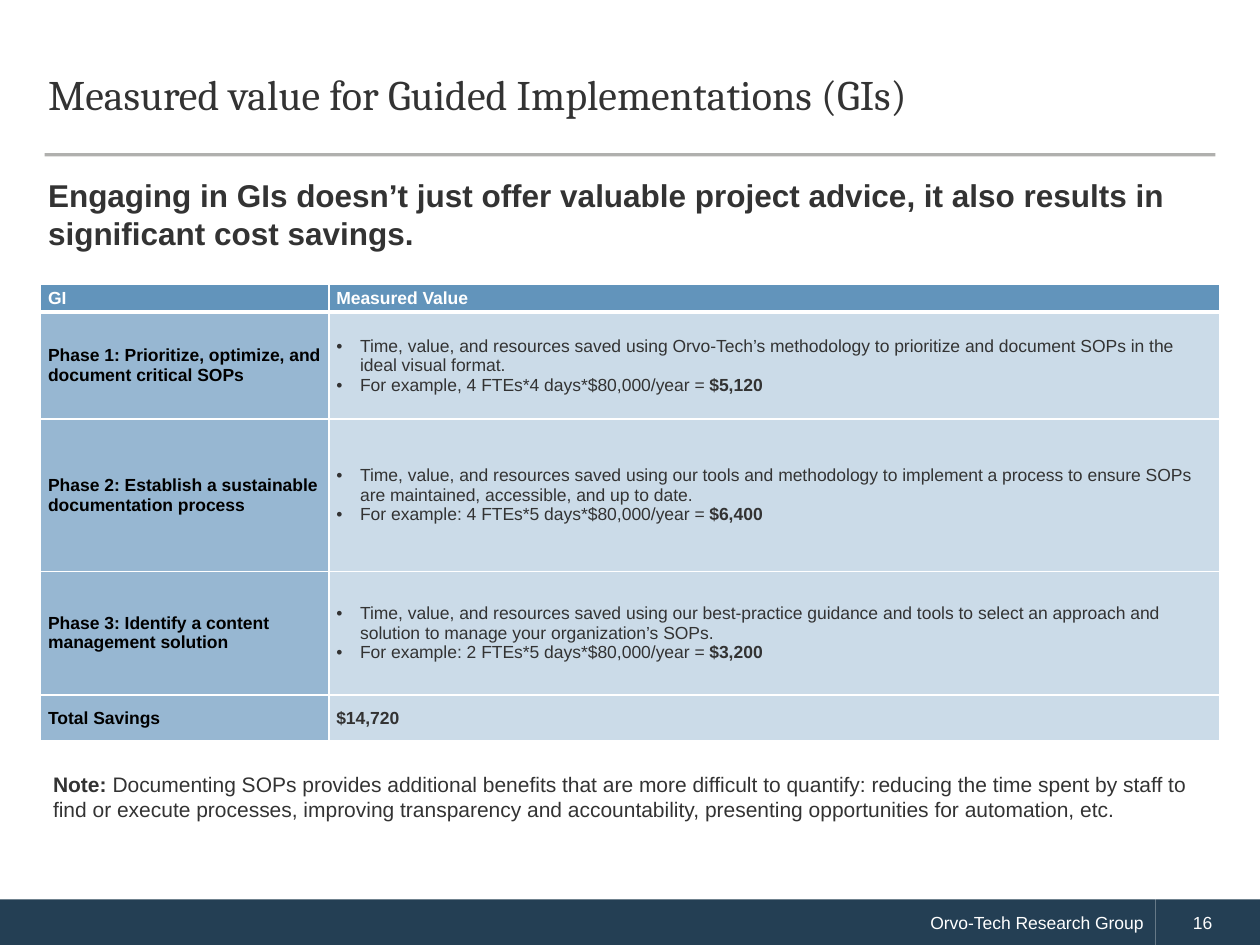
from lxml.etree import SubElement
from pptx import Presentation
from pptx.dml.color import RGBColor
from pptx.enum.shapes import MSO_CONNECTOR, MSO_SHAPE
from pptx.enum.text import MSO_ANCHOR as Anchor, PP_ALIGN as Align
from pptx.oxml.ns import qn
from pptx.util import Cm, Pt

WHITE = RGBColor(0xFF, 0xFF, 0xFF)
BLACK = RGBColor(0x00, 0x00, 0x00)
INK = RGBColor(0x33, 0x33, 0x33)
NAVY = RGBColor(0x24, 0x3F, 0x54)
RULE = RGBColor(0x45, 0x43, 0x3E)
HEADER_BLUE = RGBColor(0x62, 0x94, 0xBB)
LABEL_BLUE = RGBColor(0x97, 0xB7, 0xD2)
VALUE_BLUE = RGBColor(0xCB, 0xDB, 0xE8)

COMPANY = "Orvo-Tech"
COLUMN_WIDTHS = (5.81, 17.96)
ROW_HEIGHTS = (0.56, 2.16, 3.07, 2.49, 0.93)
PHASES = (
    ("Phase 1: Prioritize, optimize, and document critical SOPs",
     f"Time, value, and resources saved using {COMPANY}’s methodology to "
     "prioritize and document SOPs in the ideal visual format.",
     "For example, 4 FTEs*4 days*$80,000/year = ", "$5,120"),
    ("Phase 2: Establish a sustainable documentation process",
     "Time, value, and resources saved using our tools and methodology to "
     "implement a process to ensure SOPs are maintained, accessible, and up to date.",
     "For example: 4 FTEs*5 days*$80,000/year = ", "$6,400"),
    ("Phase 3: Identify a content management solution",
     "Time, value, and resources saved using our best-practice guidance and tools "
     "to select an approach and solution to manage your organization’s SOPs.",
     "For example: 2 FTEs*5 days*$80,000/year = ", "$3,200"),
)


def add_span(para, text, size, color=INK, bold=False, font="Arial"):
    span = para.add_run()
    span.text = text
    span.font.size = Pt(size)
    span.font.name = font
    span.font.bold = bold
    span.font.color.rgb = color


def set_indent(para, left, first=0):
    properties = para._p.get_or_add_pPr()
    properties.set("marL", str(Cm(left)))
    properties.set("indent", str(Cm(first)))
    return properties


def add_text_box(page, left, top, width, height, anchor=Anchor.TOP):
    box = page.shapes.add_textbox(Cm(left), Cm(top), Cm(width), Cm(height))
    box.text_frame.word_wrap = True
    box.text_frame.vertical_anchor = anchor
    return box.text_frame.paragraphs[0]


def add_footer_bar(page, left, width, text, indent, align):
    bar = page.shapes.add_shape(
        MSO_SHAPE.RECTANGLE, Cm(left), Cm(18.13), Cm(width), Cm(0.92))
    bar.shadow.inherit = False
    bar.fill.solid()
    bar.fill.fore_color.rgb = NAVY
    bar.line.fill.background()
    bar.text_frame.vertical_anchor = Anchor.MIDDLE
    para = bar.text_frame.paragraphs[0]
    para.alignment = align
    set_indent(para, indent)
    add_span(para, text, 10, WHITE)


def add_rule(page, left, right, top):
    rule = page.shapes.add_connector(
        MSO_CONNECTOR.STRAIGHT, Cm(left), Cm(top), Cm(right), Cm(top))
    rule.line.width = Pt(1.75)
    rule.line.color.rgb = RULE
    properties = rule._element.spPr
    color = properties.find(".//" + qn("a:srgbClr"))
    SubElement(color, qn("a:alpha"), val="42000")
    SubElement(properties, qn("a:effectLst"))


def add_borders(cell, top, bottom):
    properties = cell._tc.get_or_add_tcPr()
    for side, points in (("L", 1), ("R", 1), ("T", top), ("B", bottom)):
        line = SubElement(properties, qn(f"a:ln{side}"), w=str(Pt(points)))
        fill = SubElement(line, qn("a:solidFill"))
        SubElement(fill, qn("a:srgbClr"), val=str(WHITE))


def style_cell(cell, row, fill):
    add_borders(cell, 3 if row == 1 else 1, 3 if row == 0 else 1)
    cell.fill.solid()
    cell.fill.fore_color.rgb = fill
    cell.vertical_anchor = Anchor.MIDDLE
    cell.margin_left = cell.margin_right = Cm(0.15)
    cell.margin_top = cell.margin_bottom = 0
    return cell.text_frame


def add_bullet(para):
    properties = set_indent(para, 0.48, -0.48)
    SubElement(properties, qn("a:buFont"), typeface="Arial")
    SubElement(properties, qn("a:buChar"), char="•")


def add_bold_row(table, row, texts, fills, colors):
    for column, (text, fill, color) in enumerate(zip(texts, fills, colors)):
        frame = style_cell(table.cell(row, column), row, fill)
        add_span(frame.paragraphs[0], text, 10, color, True)


def add_phase_row(table, row, phase, benefit, example, saving):
    label = style_cell(table.cell(row, 0), row, LABEL_BLUE)
    add_span(label.paragraphs[0], phase, 10, BLACK, True)
    value = style_cell(table.cell(row, 1), row, VALUE_BLUE)
    first, second = value.paragraphs[0], value.add_paragraph()
    for para, text in ((first, benefit), (second, example)):
        add_bullet(para)
        add_span(para, text, 10)
    add_span(second, saving, 10, bold=True)


def add_savings_table(page):
    table = page.shapes.add_table(
        len(ROW_HEIGHTS), len(COLUMN_WIDTHS), Cm(0.82), Cm(5.73),
        Cm(sum(COLUMN_WIDTHS)), Cm(sum(ROW_HEIGHTS))).table
    for column, width in zip(table.columns, COLUMN_WIDTHS):
        column.width = Cm(width)
    for row, height in zip(table.rows, ROW_HEIGHTS):
        row.height = Cm(height)
    add_bold_row(table, 0, ("GI", "Measured Value"),
                 (HEADER_BLUE, HEADER_BLUE), (WHITE, WHITE))
    for row, phase in enumerate(PHASES, start=1):
        add_phase_row(table, row, *phase)
    add_bold_row(table, len(PHASES) + 1, ("Total Savings", "$14,720"),
                 (LABEL_BLUE, VALUE_BLUE), (BLACK, INK))


def main():
    deck = Presentation()
    deck.slide_width, deck.slide_height = Cm(25.4), Cm(19.05)
    page = deck.slides.add_slide(deck.slide_layouts[6])

    add_footer_bar(page, 0, 23.3, f"{COMPANY} Research Group", 0.74, Align.RIGHT)
    add_footer_bar(page, 23.3, 2.1, "16", 0.5, Align.LEFT)
    add_rule(page, 0.9, 24.5, 3.12)

    title = add_text_box(page, 0.72, 0.74, 23.95, 2.39, Anchor.MIDDLE)
    title.line_spacing = Pt(26)
    add_span(title, "Measured value for Guided Implementations (GIs)", 24, font="Cambria")

    summary = add_text_box(page, 0.72, 3.43, 23.95, 1.83)
    add_span(summary, "Engaging in GIs doesn’t just offer valuable project advice, "
             "it also results in significant cost savings.", 18, bold=True)

    add_savings_table(page)

    note = add_text_box(page, 0.82, 15.42, 23.77, 1.27)
    add_span(note, "Note: ", 12, bold=True)
    add_span(note, "Documenting SOPs provides additional benefits that are more difficult "
             "to quantify: reducing the time spent by staff to find or execute processes, "
             "improving transparency and accountability, presenting opportunities for "
             "automation, etc.", 12)

    deck.save("out.pptx")


if __name__ == "__main__":
    main()
